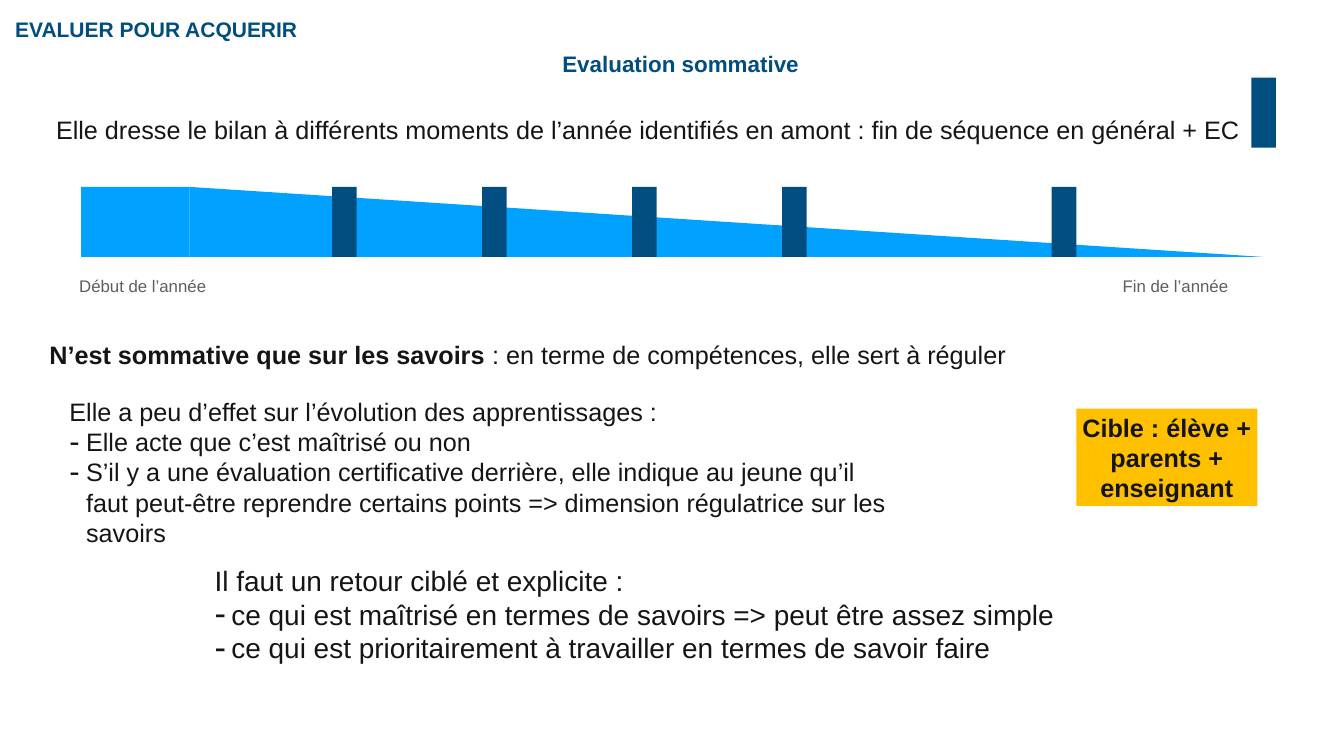
from lxml import etree
from pptx import Presentation
from pptx.dml.color import RGBColor
from pptx.enum.shapes import MSO_SHAPE
from pptx.enum.text import MSO_ANCHOR, MSO_AUTO_SIZE, PP_ALIGN
from pptx.oxml.ns import qn
from pptx.util import Cm, Pt

RECTANGLE = MSO_SHAPE.RECTANGLE
MIDDLE = MSO_ANCHOR.MIDDLE
NO_AUTOFIT = MSO_AUTO_SIZE.NONE
LEFT, CENTER = PP_ALIGN.LEFT, PP_ALIGN.CENTER

NAVY = RGBColor(0x00, 0x4D, 0x80)
BLUE = RGBColor(0x00, 0xA1, 0xFF)
GOLD = RGBColor(0xFF, 0xC0, 0x00)
GREY = RGBColor(0x5E, 0x5E, 0x5E)
INK = RGBColor(0x15, 0x15, 0x15)
FONT = "Arial"

TITLE = ("EVALUER POUR ACQUERIR", (0.61, 0.69, 14.53, 1.55))
LABELS = [
    ("Evaluation sommative", (28.19, 2.36, 12.24, 1.65), 32, NAVY, True),
    ("Début de l’année", (3.81, 13.77, 6.76, 1.27), 24, GREY, False),
    ("Fin de l’année", (56.44, 13.77, 5.61, 1.27), 24, GREY, False),
    ("Elle dresse le bilan à différents moments de l’année identifiés en amont : "
     "fin de séquence en général + EC ", (2.29, 5.61, 61.09, 1.83), 36, INK, False),
    ("N’est sommative que sur les savoirs", (2.29, 16.97, 22.35, 1.83), 36, INK, True),
    (": en terme de compétences, elle sert à réguler",
     (24.46, 16.97, 26.59, 1.83), 36, INK, False),
]
LISTS = [
    ("Elle a peu d’effet sur l’évolution des apprentissages :",
     ["Elle acte que c’est maîtrisé ou non",
      "S’il y a une évaluation certificative derrière, elle indique au jeune qu’il "
      "faut peut-être reprendre certains points => dimension régulatrice sur les savoirs"],
     (3.35, 19.79, 42.21, 7.98), 36, True),
    ("Il faut un retour ciblé et explicite :",
     ["ce qui est maîtrisé en termes de savoirs => peut être assez simple",
      "ce qui est prioritairement à travailler en termes de savoir faire"],
     (10.67, 28.24, 43.59, 5.41), 40, False),
]
TARGET = ("Cible : élève + parents + enseignant", (54.25, 20.6, 9.12, 4.9))

BAND_LEFT, BAND_TOP, BAND_HEIGHT = 4.09, 9.42, 3.53
SLOPE_LEFT, SLOPE_RIGHT = 9.55, 63.68
MARK_WIDTH = 1.24
FIRST_MARK, MARK_STEP, SEQUENCE_MARKS = 16.74, 7.56, 4
FINAL_MARK = 53.01
LEGEND_MARK = (63.07, 3.91)
BULLET_INDENT = 0.84


def place(shape, box):
    shape.left, shape.top, shape.width, shape.height = map(Cm, box)


def format_text(frame, size, color, bold=False, align=LEFT, wrap=True):
    frame.auto_size = NO_AUTOFIT
    frame.word_wrap = wrap
    frame.vertical_anchor = MIDDLE
    frame.margin_left = frame.margin_right = Cm(0.15)
    frame.margin_top = frame.margin_bottom = Cm(0.15)
    for paragraph in frame.paragraphs:
        paragraph.alignment = align
        paragraph.space_before = Pt(0)
        for run in paragraph.runs:
            run.font.name = FONT
            run.font.size = Pt(size)
            run.font.bold = bold
            run.font.color.rgb = color


def set_bullet(paragraph, bulleted):
    properties = paragraph._p.get_or_add_pPr()
    indent = Cm(BULLET_INDENT) if bulleted else 0
    properties.set("marL", str(indent))
    properties.set("indent", str(-indent))
    if bulleted:
        etree.SubElement(properties, qn("a:buSzPct")).set("val", "123000")
        etree.SubElement(properties, qn("a:buChar")).set("char", "-")
    else:
        etree.SubElement(properties, qn("a:buNone"))


def paint(shape, color):
    shape.shadow.inherit = False
    shape.fill.solid()
    shape.fill.fore_color.rgb = color
    shape.line.fill.background()


def add_block(slide, box, color):
    block = slide.shapes.add_shape(RECTANGLE, *map(Cm, box))
    paint(block, color)
    return block


def add_timeline(slide):
    add_block(slide, (BAND_LEFT, BAND_TOP, SLOPE_LEFT - BAND_LEFT, BAND_HEIGHT), BLUE)
    base = BAND_TOP + BAND_HEIGHT
    builder = slide.shapes.build_freeform(Cm(SLOPE_LEFT), Cm(BAND_TOP), scale=1.0)
    builder.add_line_segments(
        [(Cm(SLOPE_LEFT), Cm(base)), (Cm(SLOPE_RIGHT), Cm(base))], close=True)
    paint(builder.convert_to_shape(), BLUE)

    marks = [(FIRST_MARK + i * MARK_STEP, BAND_TOP) for i in range(SEQUENCE_MARKS)]
    for left, top in marks + [(FINAL_MARK, BAND_TOP), LEGEND_MARK]:
        add_block(slide, (left, top, MARK_WIDTH, BAND_HEIGHT), NAVY)


def main():
    deck = Presentation()
    deck.slide_width, deck.slide_height = Cm(67.74), Cm(38.1)
    slide = deck.slides.add_slide(deck.slide_layouts[3])
    title, *bodies = slide.placeholders

    heading, box = TITLE
    place(title, box)
    title.text_frame.text = heading
    format_text(title.text_frame, 30, NAVY, bold=True, wrap=False)

    for body, (intro, points, box, size, wrap) in zip(bodies[:2], LISTS):
        place(body, box)
        body.text_frame.text = "\n".join([intro, *points])
        format_text(body.text_frame, size, INK, wrap=wrap)
        for index, paragraph in enumerate(body.text_frame.paragraphs):
            set_bullet(paragraph, index > 0)

    add_timeline(slide)

    for wording, box, size, color, bold in LABELS:
        label = slide.shapes.add_textbox(*map(Cm, box))
        label.text_frame.text = wording
        format_text(label.text_frame, size, color, bold, CENTER, wrap=False)

    audience, box = TARGET
    target = add_block(slide, box, GOLD)
    target.text_frame.text = audience
    format_text(target.text_frame, 36, INK, bold=True, align=CENTER)

    deck.save("out.pptx")


if __name__ == "__main__":
    main()
